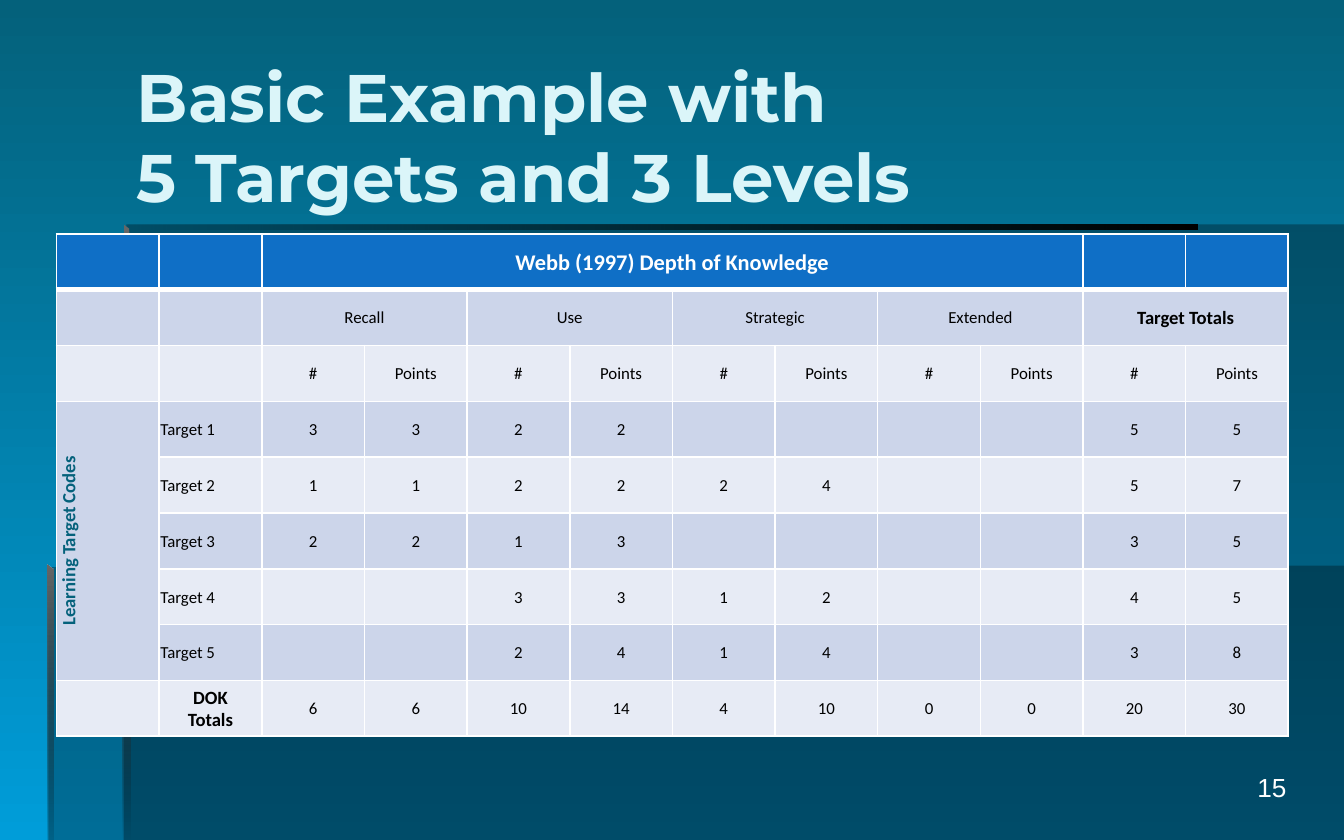
"""Builds a slide with a depth-of-knowledge table for five learning targets."""
from lxml.etree import SubElement
from pptx import Presentation
from pptx.dml.color import RGBColor
from pptx.enum.text import MSO_ANCHOR, PP_ALIGN
from pptx.oxml.ns import qn
from pptx.util import Pt

SCALE = 9144
WIDTH, HEIGHT = 1000, 625

BLACK = RGBColor(0x00, 0x00, 0x00)
GREY = RGBColor(0x66, 0x66, 0x66)
WHITE = RGBColor(0xFF, 0xFF, 0xFF)
TEAL = RGBColor(0x04, 0x61, 0x7B)
SKY = RGBColor(0x00, 0x9D, 0xD9)
PALE = RGBColor(0xDB, 0xF5, 0xF9)
HEADER = RGBColor(0x0F, 0x6F, 0xC6)
BANDS = (RGBColor(0xE7, 0xEB, 0xF5), RGBColor(0xCC, 0xD5, 0xEA))

TITLE = "Basic Example with\n5 Targets and 3 Levels"
SIDE = "Learning Target Codes"
TOTALS = ("Target Totals", "DOK\nTotals")
LEVELS = ("Recall", "Use", "Strategic", "Extended", TOTALS[0])

ROWS = [
    ["", "", "Webb (1997) Depth of Knowledge"] + [""] * 9,
    ["", ""] + [text for level in LEVELS for text in (level, "")],
    ["", ""] + ["#", "Points"] * len(LEVELS),
    [SIDE, "Target 1", "3", "3", "2", "2", "", "", "", "", "5", "5"],
    ["", "Target 2", "1", "1", "2", "2", "2", "4", "", "", "5", "7"],
    ["", "Target 3", "2", "2", "1", "3", "", "", "", "", "3", "5"],
    ["", "Target 4", "", "", "3", "3", "1", "2", "", "", "4", "5"],
    ["", "Target 5", "", "", "2", "4", "1", "4", "", "", "3", "8"],
    ["", TOTALS[1], "6", "6", "10", "14", "4", "10", "0", "0", "20", "30"],
]
SPANS = [(0, 2, 0, 9), (3, 0, 7, 0)] + [(1, c, 1, c + 1) for c in range(2, 12, 2)]

PANELS = [
    [(92, 421), (92, 625), (1000, 625), (1000, 421)],
    [(94, 422), (36, 422), (36, 625), (1000, 625), (1000, 167), (94, 167)],
]
EDGES = [
    ([(92, 167), (92, 171), (891, 171), (891, 167)], BLACK, 0, 100, 0),
    ([(92, 167), (92, 425), (97, 425), (96, 170)], GREY, 100, 100, 270),
    ([(91, 625), (97, 625), (96, 424), (91, 420)], GREY, 100, 0, 270),
    ([(35, 420), (35, 424), (535, 424), (535, 420)], BLACK, 0, 100, 0),
    ([(35, 420), (35, 625), (40, 625), (40, 424)], GREY, 100, 10, 270),
]


def px(n):
    return n * SCALE


class Deck:
    """Holds the style and the current slide."""

    def __init__(self, s, font="Calibri"):
        self.s = s
        self.font = font

    def gradient(self, fill, colors, angle):
        fill.gradient()
        fill.gradient_angle = angle
        for stop, color in zip(fill.gradient_stops, colors):
            stop.color.rgb = color

    def background(self, top, bottom):
        self.gradient(self.s.background.fill, (top, bottom), 270)

    def outline(self, points, colors, alphas, angle=0):
        first, *rest = [(px(x), px(y)) for x, y in points]
        builder = self.s.shapes.build_freeform(*first)
        builder.add_line_segments(rest, close=True)
        sp = builder.convert_to_shape()
        sp.shadow.inherit = False
        sp.line.fill.background()
        if len(colors) == 1:
            sp.fill.solid()
            sp.fill.fore_color.rgb = colors[0]
        else:
            self.gradient(sp.fill, colors, angle)
        for clr, alpha in zip(sp._element.spPr.iter(qn("a:srgbClr")), alphas):
            SubElement(clr, qn("a:alpha"), val=str(alpha * 1000))

    def paragraph(self, p, text, size, color, bold=False, align=PP_ALIGN.LEFT, font=None):
        p.text = text
        p.alignment = align
        p.font.name = font or self.font
        p.font.size = Pt(size)
        p.font.bold = bold
        p.font.color.rgb = color

    def text(self, box, text, size, color, anchor=MSO_ANCHOR.TOP, **style):
        tf = self.s.shapes.add_textbox(*map(px, box)).text_frame
        tf.word_wrap = True
        tf.vertical_anchor = anchor
        self.paragraph(tf.paragraphs[0], text, size, color, **style)

    def borders(self, cell, widths):
        tc_pr = cell._tc.get_or_add_tcPr()
        for side, width in widths.items():
            ln = SubElement(tc_pr, qn(f"a:ln{side}"), w=str(int(Pt(width))))
            fill = SubElement(ln, qn("a:solidFill"))
            SubElement(fill, qn("a:srgbClr"), val=str(WHITE))

    def cell(self, cell, row, text):
        self.borders(cell, {"L": 1, "R": 1, "T": 3 if row == 1 else 1, "B": 3 if row == 0 else 1})
        cell.fill.solid()
        cell.fill.fore_color.rgb = BANDS[row % 2] if row else HEADER
        cell.margin_left = cell.margin_right = cell.margin_top = px(1)
        cell.margin_bottom = 0
        cell.vertical_anchor = MSO_ANCHOR.MIDDLE
        size, color, bold = 9, BLACK, False
        if row == 0:
            size, color, bold = 12, WHITE, True
        elif text == SIDE:
            size, color, bold = 10, TEAL, True
            cell._tc.tcPr.set("vert", "vert270")
        elif text in TOTALS:
            size, bold = 10, True
        align = PP_ALIGN.LEFT if text.startswith("Target ") and not bold else PP_ALIGN.CENTER
        self.paragraph(cell.text_frame.paragraphs[0], text, size, color, bold, align)

    def table(self, box, rows, spans):
        left, top, width, height = map(px, box)
        n_rows, n_cols = len(rows), len(rows[0])
        table = self.s.shapes.add_table(n_rows, n_cols, left, top, width, height).table
        table.first_row = table.horz_banding = False
        for column in table.columns:
            column.width = width // n_cols
        for r, texts in enumerate(rows):
            table.rows[r].height = height // n_rows
            for c, text in enumerate(texts):
                self.cell(table.cell(r, c), r, text)
        for r1, c1, r2, c2 in spans:
            table.cell(r1, c1).merge(table.cell(r2, c2))


def main():
    prs = Presentation()
    prs.slide_width, prs.slide_height = px(WIDTH), px(HEIGHT)
    deck = Deck(prs.slides.add_slide(prs.slide_layouts[6]))
    deck.background(TEAL, SKY)
    for points in PANELS:
        deck.outline(points, [BLACK], [30])
    for points, start, alpha, end_alpha, angle in EDGES:
        deck.outline(points, [start, BLACK], [alpha, end_alpha], angle)
    deck.text((92, 42, 817, 118), TITLE, 36, PALE, MSO_ANCHOR.MIDDLE, bold=True, font="Montserrat")
    deck.table((42, 174, 917, 374), ROWS, SPANS)
    deck.text((759, 569, 208, 43), "15", 14, WHITE, align=PP_ALIGN.RIGHT, font="Arial")
    prs.save("out.pptx")


if __name__ == "__main__":
    main()
